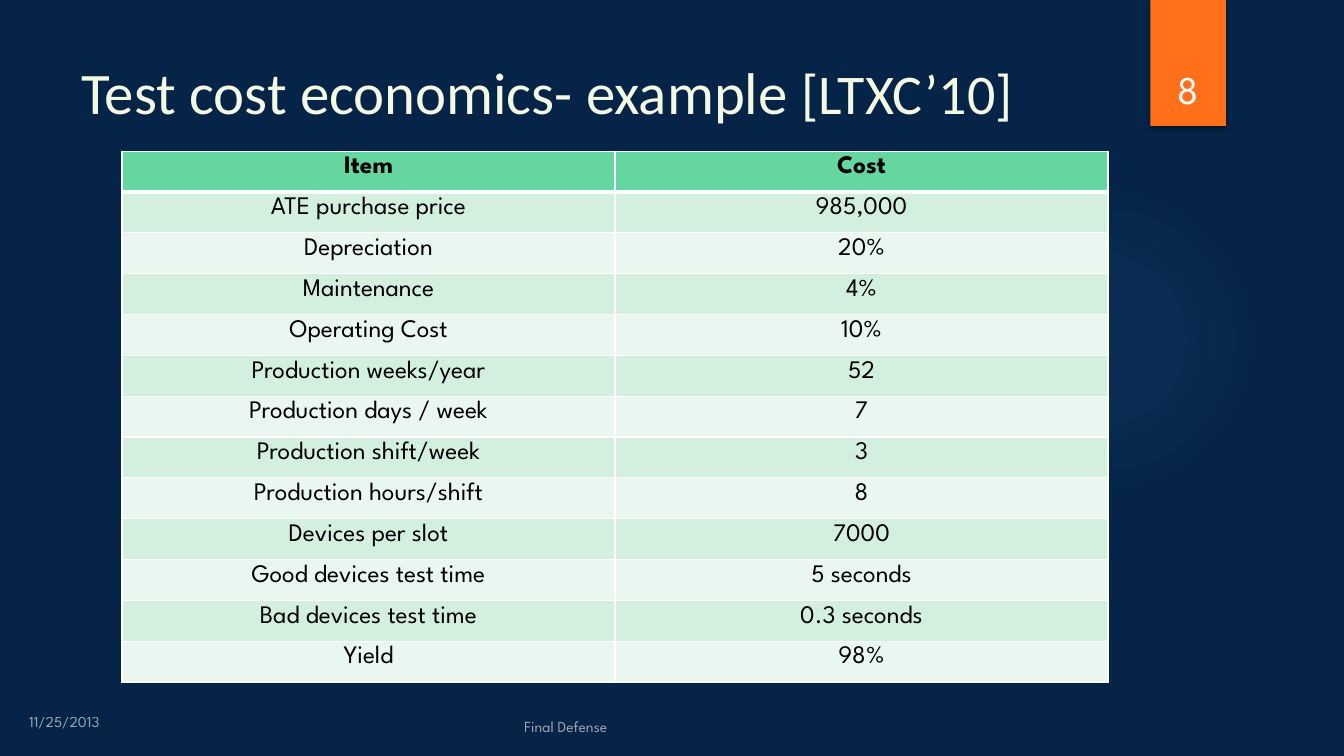
from lxml import etree
from pptx import Presentation
from pptx import util as u
from pptx.dml.color import RGBColor
from pptx.enum import shapes, text
from pptx.oxml import parse_xml
from pptx.oxml.ns import nsdecls, qn

SPARTAN = "League Spartan"
WHITE = "FFFFFF"
FOOTER = {"size": 11, "name": SPARTAN, "color": WHITE, "alpha": 60}
COSTS = [
    ("Item", "Cost"),
    ("ATE purchase price", "985,000"),
    ("Depreciation", "20%"),
    ("Maintenance", "4%"),
    ("Operating Cost", "10%"),
    ("Production weeks/year", "52"),
    ("Production days / week", "7"),
    ("Production shift/week", "3"),
    ("Production hours/shift", "8"),
    ("Devices per slot", "7000"),
    ("Good devices test time", "5 seconds"),
    ("Bad devices test time", "0.3 seconds"),
    ("Yield", "98%"),
]


def rgb(value):
    """Turn a hex string into a colour."""
    return RGBColor.from_string(value)


def box(values):
    """Turn left, top, width and height in inches into lengths."""
    return [u.Inches(v) for v in values]


def add_run(p, words, size, name, color, bold=False, alpha=None):
    """Add a formatted run to a paragraph."""
    r = p.add_run()
    r.text = words
    for key, value in {"size": u.Pt(size), "name": name, "bold": bold}.items():
        setattr(r.font, key, value)
    r.font.color.rgb = rgb(color)
    if alpha is not None:
        clr = r.font._element.find(".//" + qn("a:srgbClr"))
        etree.SubElement(clr, qn("a:alpha")).set("val", str(alpha * 1000))


def add_text(s, at, runs, align=text.PP_ALIGN.LEFT, anchor=text.MSO_ANCHOR.TOP):
    """Add a one-paragraph text box from pairs of words and format."""
    tf = s.shapes.add_textbox(*box(at)).text_frame
    for key, value in {"word_wrap": True, "vertical_anchor": anchor}.items():
        setattr(tf, key, value)
    p = tf.paragraphs[0]
    p.alignment = align
    for words, fmt in runs:
        add_run(p, words, **fmt)


def add_block(s, kind, at, color):
    """Add a plain filled shape without outline or shadow."""
    sp = s.shapes.add_shape(kind, *box(at))
    sp.shadow.inherit = False
    sp.fill.solid()
    sp.fill.fore_color.rgb = rgb(color)
    sp.line.fill.background()
    return sp


def add_glow(s, at, color, stops):
    """Add a circle that fades out from its centre."""
    sp = add_block(s, shapes.MSO_SHAPE.OVAL, at, color)
    gs = "".join(
        f'<a:gs pos="{pos * 1000}"><a:srgbClr val="{color}">'
        f'<a:alpha val="{alpha * 1000}"/></a:srgbClr></a:gs>'
        for pos, alpha in stops
    )
    solid = sp._element.spPr.find(qn("a:solidFill"))
    solid.getparent().replace(solid, parse_xml(
        f'<a:gradFill {nsdecls("a")} rotWithShape="1"><a:gsLst>{gs}</a:gsLst>'
        '<a:path path="circle"><a:fillToRect l="50000" t="50000" r="50000" b="50000"/>'
        '</a:path></a:gradFill>'))


def add_number_tab(s, at, color):
    """Add the page number tab with its soft shadow."""
    sp = add_block(s, shapes.MSO_SHAPE.RECTANGLE, at, color)
    sp._element.spPr.find(qn("a:effectLst")).append(parse_xml(
        f'<a:outerShdw {nsdecls("a")} blurRad="{u.Pt(3)}" dist="{u.Pt(2)}" dir="5400000" '
        'rotWithShape="0"><a:srgbClr val="000000"><a:alpha val="45000"/></a:srgbClr>'
        '</a:outerShdw>'))


def set_borders(cell, widths):
    """Draw white cell borders with the given widths in points."""
    tcPr = cell._tc.get_or_add_tcPr()
    for side in "LRTB":
        tcPr.append(parse_xml(
            f'<a:ln{side} {nsdecls("a")} w="{u.Pt(widths.get(side, 1))}"><a:solidFill>'
            f'<a:srgbClr val="{WHITE}"/></a:solidFill></a:ln{side}>'))


def add_cost_table(s, at, rows):
    """Add the table with a header row and alternating bands."""
    table = s.shapes.add_table(len(rows), len(rows[0]), *box(at)).table
    for i, values in enumerate(rows):
        table.rows[i].height = u.Inches(at[3] / len(rows))
        fill = "65D6A0" if i == 0 else ("EAF7F0", "D3F0DF")[i % 2]
        widths = {0: {"B": 3}, 1: {"T": 3}}.get(i, {})
        for j, words in enumerate(values):
            cell = table.cell(i, j)
            set_borders(cell, widths)
            cell.fill.solid()
            cell.fill.fore_color.rgb = rgb(fill)
            p = cell.text_frame.paragraphs[0]
            p.alignment = text.PP_ALIGN.CENTER
            add_run(p, words, 18, SPARTAN, "000000", bold=i == 0)


def main():
    """Build the slide and save it."""
    prs = Presentation()
    prs.slide_width, prs.slide_height = u.Inches(13.33), u.Inches(7.5)
    s = prs.slides.add_slide(prs.slide_layouts[6])
    s.background.fill.solid()
    s.background.fill.fore_color.rgb = rgb("052447")

    add_glow(s, (9.41, 1.83, 3.08, 3.08), "5DA4F4", [(0, 7), (36, 6), (69, 0)])
    add_number_tab(s, (11.41, 0, 0.75, 1.25), "FE711A")
    title = {"name": "Calibri", "color": "F3F9E2"}
    add_text(s, (0.71, 0.5, 10.69, 1.53), [
        ("Test cost economics- example ", {"size": 42, **title}),
        ("[LTXC’10]", {"size": 40, **title}),
    ])
    add_cost_table(s, (1.21, 1.5, 9.78, 5.27), COSTS)

    low_center = {"align": text.PP_ALIGN.CENTER, "anchor": text.MSO_ANCHOR.BOTTOM}
    add_text(s, (0.19, 7.02, 1.08, 0.33), [("11/25/2013", FOOTER)])
    add_text(s, (3.52, 7.02, 4.22, 0.33), [("Final Defense ", FOOTER)], **low_center)
    number = {"size": 28, "name": SPARTAN, "color": WHITE}
    add_text(s, (11.32, 0.32, 0.92, 0.84), [("8", number)], **low_center)
    prs.save("out.pptx")


if __name__ == "__main__":
    main()
